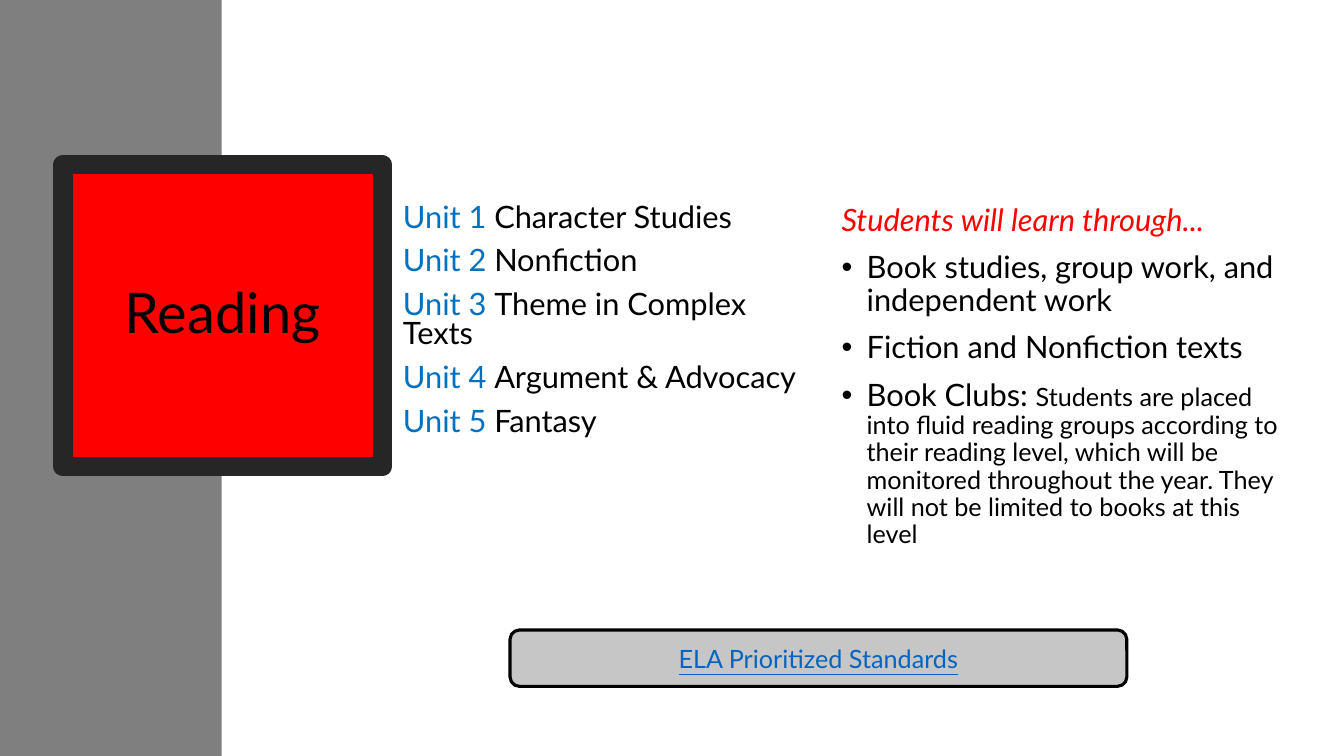
from dataclasses import dataclass

import pptx
import pptx.dml.color
import pptx.enum.shapes
import pptx.enum.text
import pptx.util
from lxml import etree
from pptx.oxml.ns import qn

Pt = pptx.util.Pt
SHAPES = pptx.enum.shapes.MSO_SHAPE
ALIGN = pptx.enum.text.PP_ALIGN
ANCHOR = pptx.enum.text.MSO_ANCHOR
AUTO_SIZE = pptx.enum.text.MSO_AUTO_SIZE


@dataclass(frozen=True)
class Theme:
    font: str = "Lato"
    band: str = "7F7F7F"
    frame: str = "262626"
    accent: str = "FF0000"
    button: str = "C6C6C6"
    link: str = "0563C1"
    unit: str = "0070C0"
    text: str = "000000"
    title_size: int = 40
    body_size: int = 22
    detail_size: int = 18


THEME = Theme()

UNITS = [
    "Character Studies",
    "Nonfiction",
    "Theme in Complex Texts",
    "Argument & Advocacy",
    "Fantasy",
]
METHODS = [
    ("Book studies, group work, and independent work", ""),
    ("Fiction and Nonfiction texts", ""),
    ("Book Clubs: ", "Students are placed into fluid reading groups according to "
     "their reading level, which will be monitored throughout the year. "
     "They will not be limited to books at this level"),
]


def rgb(value):
    return pptx.dml.color.RGBColor.from_string(value)


def paint(shape, fill, line=None, width=0):
    shape.fill.solid()
    shape.fill.fore_color.rgb = rgb(fill)
    if line:
        shape.line.color.rgb = rgb(line)
        shape.line.width = Pt(width)
    else:
        shape.line.fill.background()


def style(font, size, color):
    font.name = THEME.font
    font.size = Pt(size)
    font.color.rgb = rgb(color)


def add_block(slide, kind, box, fill, line=None, width=0):
    block = slide.shapes.add_shape(kind, *map(Pt, box))
    block.shadow.inherit = False
    paint(block, fill, line, width)
    return block


def set_label(shape, text, size, color):
    """Put one centred line of text into a shape."""
    frame = shape.text_frame
    frame.word_wrap = True
    frame.auto_size = AUTO_SIZE.NONE
    frame.vertical_anchor = ANCHOR.MIDDLE
    label = frame.paragraphs[0]
    label.text = text
    label.alignment = ALIGN.CENTER
    style(label.font, size, color)
    return label


def add_column(slide, box, count, line_spacing):
    """Add a text box and return its evenly spaced, empty paragraphs."""
    frame = slide.shapes.add_textbox(*map(Pt, box)).text_frame
    frame.word_wrap = True
    for _ in range(count - 1):
        frame.add_paragraph()
    for paragraph in frame.paragraphs:
        paragraph.line_spacing = line_spacing
        paragraph.space_before = Pt(10)
        style(paragraph.font, THEME.body_size, THEME.text)
    return frame.paragraphs


def add_run(paragraph, text, size, color):
    run = paragraph.add_run()
    run.text = text
    style(run.font, size, color)


def add_bullet(paragraph, indent=18):
    properties = paragraph._p.get_or_add_pPr()
    properties.set("marL", str(Pt(indent)))
    properties.set("indent", str(-Pt(indent)))
    bullet = etree.Element(qn("a:buChar"), char="•")
    defaults = properties.find(qn("a:defRPr"))
    defaults.addprevious(etree.Element(qn("a:buFont"), typeface="Arial"))
    defaults.addprevious(bullet)


def add_title(slide):
    title = slide.shapes.title
    title.left, title.top, title.width, title.height = map(Pt, (45, 117.5, 228, 216))
    paint(title, THEME.accent, THEME.frame, 13.75)
    set_label(title, "Reading", THEME.title_size, THEME.text).line_spacing = 0.9


def add_units(slide):
    lines = add_column(slide, (280.8, 142.6, 313.9, 164.2), len(UNITS), 0.8)
    for number, (line, name) in enumerate(zip(lines, UNITS), 1):
        add_run(line, f"Unit {number} ", THEME.body_size, THEME.unit)
        add_run(line, name, THEME.body_size, THEME.text)


def add_methods(slide):
    heading, *lines = add_column(slide, (594, 142.6, 337.7, 232.6), len(METHODS) + 1, 0.9)
    heading.text = "Students will learn through..."
    heading.font.italic = True
    heading.font.color.rgb = rgb(THEME.accent)
    for line, (method, detail) in zip(lines, METHODS):
        add_bullet(line)
        add_run(line, method, THEME.body_size, THEME.text)
        if detail:
            add_run(line, detail, THEME.detail_size, THEME.text)


def main():
    deck = pptx.Presentation()
    deck.slide_width, deck.slide_height = Pt(960), Pt(540)
    slide = deck.slides.add_slide(deck.slide_layouts[5])

    band = add_block(slide, SHAPES.RECTANGLE, (0, 0, 158.4, 540), THEME.band)
    slide.shapes.title._element.addprevious(band._element)
    add_title(slide)

    standards = add_block(slide, SHAPES.ROUNDED_RECTANGLE, (364.3, 450, 440.6, 40.3),
                          THEME.button, THEME.text, 2.25)
    label = set_label(standards, "ELA Prioritized Standards", THEME.detail_size, THEME.link)
    label.font.underline = True

    add_units(slide)
    add_methods(slide)
    deck.save("out.pptx")


if __name__ == "__main__":
    main()
